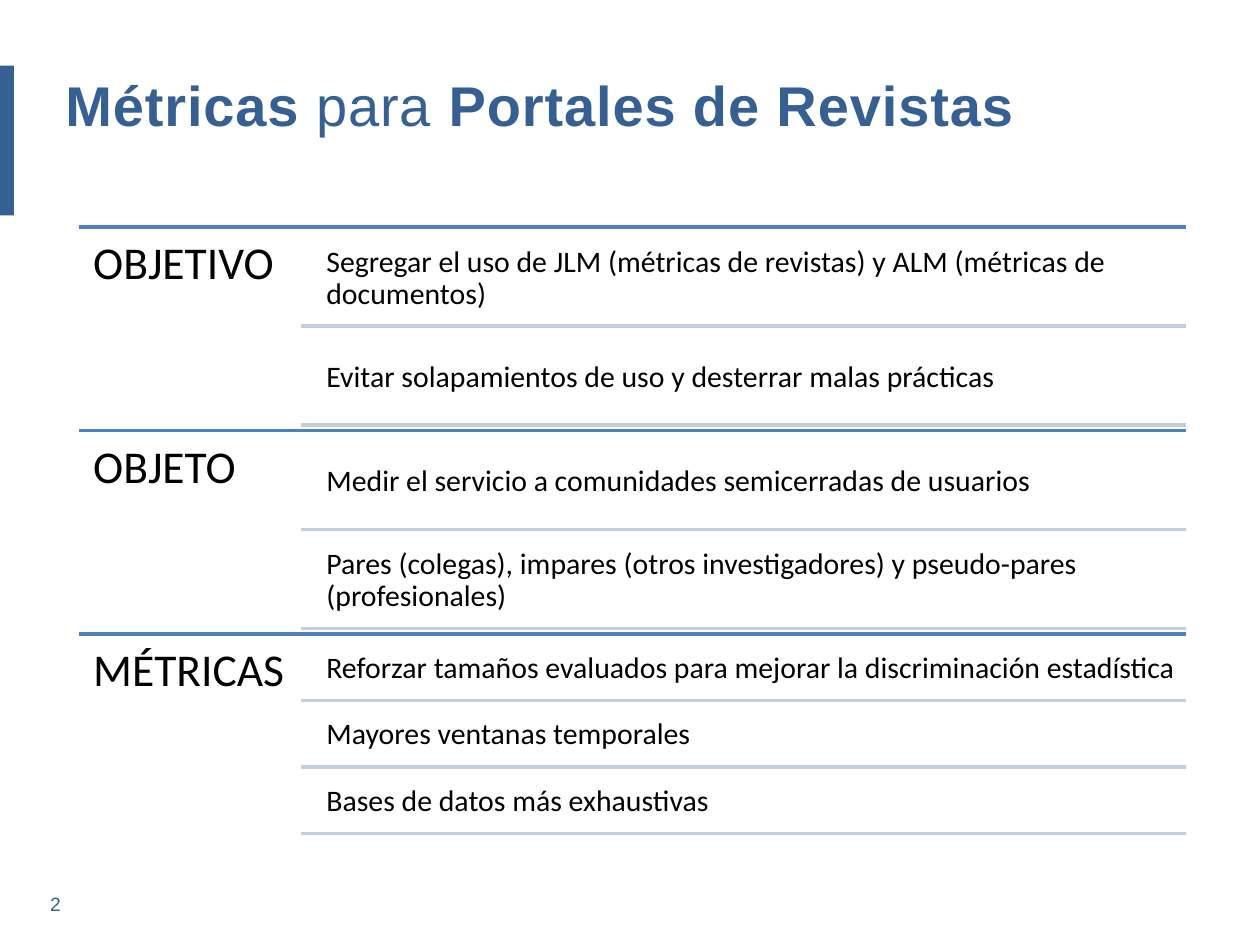
from dataclasses import dataclass

from lxml.etree import SubElement
from pptx import Presentation
from pptx.dml.color import RGBColor
from pptx.enum.shapes import MSO_CONNECTOR, MSO_SHAPE
from pptx.enum.text import MSO_ANCHOR
from pptx.oxml.ns import qn
from pptx.util import Inches, Pt

NAVY = RGBColor(0x37, 0x60, 0x92)
BLUE = RGBColor(0x4F, 0x81, 0xBD)
PALE = RGBColor(0xC2, 0xCD, 0xE1)
BLACK = RGBColor(0, 0, 0)

# Layout of the stacked bands, in inches
LEFT, RIGHT = 0.63, 9.41
TOP, BAND_HEIGHT, BAND_PITCH = 1.8, 1.61, 1.615
LABEL_WIDTH = 1.75
RULE_LEFT, ITEM_LEFT = 2.39, 2.52
GAP_RATIO = 0.05  # gap between items, as a share of item height


@dataclass(frozen=True)
class Band:
    label: str
    items: tuple[str, ...]


@dataclass(frozen=True)
class Span:
    text: str
    bold: bool = False


BANDS = (
    Band("OBJETIVO", (
        "Segregar el uso de JLM (métricas de revistas) y ALM (métricas de documentos)",
        "Evitar solapamientos de uso y desterrar malas prácticas",
    )),
    Band("OBJETO", (
        "Medir el servicio a comunidades semicerradas de usuarios",
        "Pares (colegas), impares (otros investigadores) y pseudo-pares (profesionales)",
    )),
    Band("MÉTRICAS", (
        "Reforzar tamaños evaluados para mejorar la discriminación estadística",
        "Mayores ventanas temporales",
        "Bases de datos más exhaustivas",
    )),
)
TITLE = (Span("Métricas", True), Span(" para "), Span("Portales de Revistas", True))


def add_text_box(page, left: float, top: float, width: float, height: float):
    box = page.shapes.add_textbox(Inches(left), Inches(top), Inches(width), Inches(height))
    box.text_frame.word_wrap = True
    return box.text_frame


def add_spaced_text(page, left: float, top: float, width: float, height: float,
                    spans: tuple[Span, ...], size: float, spacing: float) -> None:
    """Add navy Arial text with letter spacing given in points."""
    para = add_text_box(page, left, top, width, height).paragraphs[0]
    para.font.name, para.font.size = "Arial", Pt(size)
    para.font.color.rgb = NAVY
    for span in spans:
        run = para.add_run()
        run.text = span.text
        run.font.bold = span.bold
        run.font._element.set("spc", str(round(spacing * 100)))


def add_band_text(page, left: float, top: float, width: float, height: float,
                  text: str, size: float, inset: float, anchor: MSO_ANCHOR) -> None:
    frame = add_text_box(page, left, top, width, height)
    frame.margin_left = frame.margin_right = Inches(inset)
    frame.margin_top = frame.margin_bottom = Inches(inset)
    frame.vertical_anchor = anchor
    para = frame.paragraphs[0]
    para.text = text
    para.line_spacing = 0.9
    para.font.name, para.font.size = "Calibri", Pt(size)
    para.font.color.rgb = BLACK


def add_rule(page, left: float, y: float, color: RGBColor) -> None:
    rule = page.shapes.add_connector(
        MSO_CONNECTOR.STRAIGHT, Inches(left), Inches(y), Inches(RIGHT), Inches(y))
    rule.line.color.rgb = color
    rule.line.width = Pt(2)
    SubElement(rule._element.spPr, qn("a:effectLst"))


def add_band(page, band: Band, top: float) -> None:
    count = len(band.items)
    height = BAND_HEIGHT / (count + (count + 1) * GAP_RATIO)
    gap = height * GAP_RATIO
    add_rule(page, LEFT, top, BLUE)
    add_band_text(page, LEFT, top, LABEL_WIDTH, BAND_HEIGHT,
                  band.label, 26, 0.11, MSO_ANCHOR.TOP)
    for index, item in enumerate(band.items):
        item_top = top + gap + index * (height + gap)
        add_band_text(page, ITEM_LEFT, item_top, RIGHT - ITEM_LEFT, height,
                      item, 17, 0.07, MSO_ANCHOR.MIDDLE)
        add_rule(page, RULE_LEFT, item_top + height, PALE)


def main() -> None:
    deck = Presentation()
    deck.slide_width, deck.slide_height = Inches(10), Inches(7.5)
    page = deck.slides.add_slide(deck.slide_layouts[6])

    # Page number and side accent
    add_spaced_text(page, 0.3, 7.03, 9.25, 0.29, (Span("2"),), 11, 1)
    accent = page.shapes.add_shape(
        MSO_SHAPE.RECTANGLE, Inches(0), Inches(0.52), Inches(0.11), Inches(1.19))
    accent.shadow.inherit = False
    accent.fill.solid()
    accent.fill.fore_color.rgb = NAVY
    accent.line.fill.background()

    # Title
    add_spaced_text(page, 0.42, 0.51, 9.16, 0.64, TITLE, 32, 0.5)

    # Bands with their items
    for index, band in enumerate(BANDS):
        add_band(page, band, TOP + index * BAND_PITCH)

    deck.save("out.pptx")


if __name__ == "__main__":
    main()
